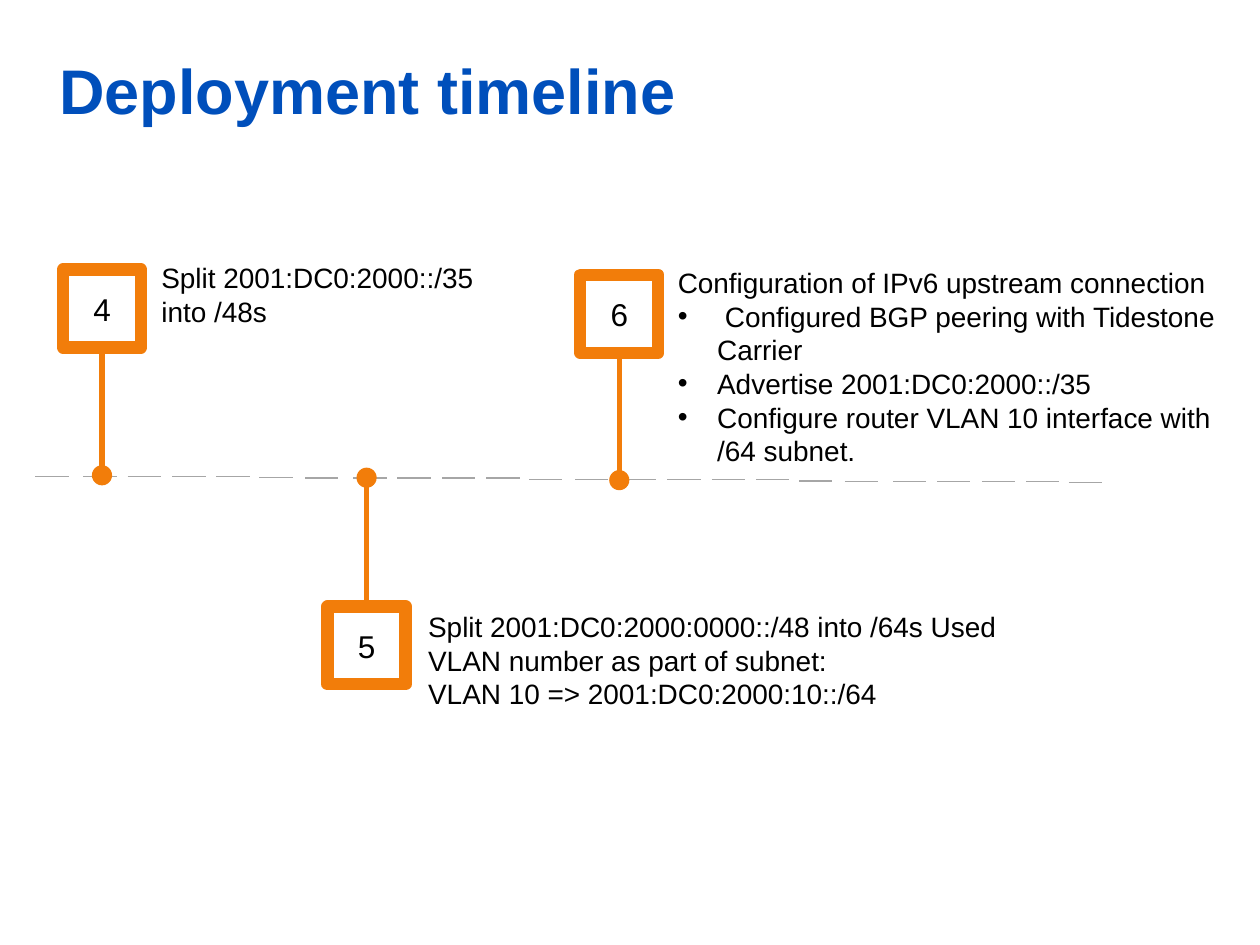
from lxml import etree
from pptx import Presentation
from pptx.dml.color import RGBColor
from pptx.enum.shapes import MSO_CONNECTOR, MSO_SHAPE
from pptx.enum.text import MSO_ANCHOR, PP_ALIGN
from pptx.oxml.ns import qn
from pptx.util import Pt

STRAIGHT = MSO_CONNECTOR.STRAIGHT
RECTANGLE, OVAL = MSO_SHAPE.RECTANGLE, MSO_SHAPE.OVAL
MIDDLE = MSO_ANCHOR.MIDDLE
LEFT, CENTER = PP_ALIGN.LEFT, PP_ALIGN.CENTER
TOP_SIDE, BOTTOM_SIDE = 0, 2

COLORS = {"title": "004FBB", "accent": "F27D0A", "dash": "A6A6A6", "text": "000000"}
FONT = "Arial"
SQUARE, DOT = 44.6, 11.5
DASH_OFFSETS = (0, 27.5, 52.75, 78.25, 103.5, 128)

MILESTONES = (
    ("4", 36, 154, 271.6),
    ("5", 187.2, 346.5, 273),
    ("6", 331.6, 157, 274.4),
)
NOTES = (
    ((64.1, 145.4, 324.7, 65.5), (42.5, -21.5), (
        ("Split 2001:DC0:2000::/35", False),
        ("into /48s", False))),
    ((237.6, 344.9, 342.7, 65.5), (0, 0), (
        ("Split 2001:DC0:2000:0000::/48 into /64s Used VLAN number as part of subnet:", False),
        ("VLAN 10 => 2001:DC0:2000:10::/64", False))),
    ((380.2, 148.3, 337, 123.8), (0, 0), (
        ("Configuration of IPv6 upstream connection", False),
        (" Configured BGP peering with Tidestone Carrier", True),
        ("Advertise 2001:DC0:2000::/35", True),
        ("Configure router VLAN 10 interface with /64 subnet.", True))),
)


def color(name):
    """Return the named colour."""
    return RGBColor.from_string(COLORS[name])


def format_para(para, size, name, align=LEFT, bold=False):
    """Format every run of a paragraph."""
    para.alignment = align
    for span in para.runs:
        span.font.name, span.font.size, span.font.bold = FONT, Pt(size), bold
        span.font.color.rgb = color(name)


def indent_para(para, margin, first, bullet=False):
    """Set the indents and the optional bullet of a paragraph."""
    props = para._p.get_or_add_pPr()
    props.set("marL", str(Pt(margin)))
    props.set("indent", str(Pt(first)))
    if bullet:
        etree.SubElement(props, qn("a:buFont")).set("typeface", FONT)
        etree.SubElement(props, qn("a:buChar")).set("char", "•")


def add_line(shapes, start, end, name, width):
    """Draw a straight line without a shadow."""
    line = shapes.add_connector(STRAIGHT, *map(Pt, start + end))
    line.line.color.rgb = color(name)
    line.line.width = Pt(width)
    etree.SubElement(line._element.spPr, qn("a:effectLst"))
    return line


def add_title(page, box, text):
    """Place the slide title in its box."""
    title = page.shapes.title
    title.left, title.top, title.width, title.height = map(Pt, box)
    frame = title.text_frame
    frame.margin_left = frame.margin_right = frame.margin_top = frame.margin_bottom = 0
    frame.vertical_anchor = MIDDLE
    frame.text = text
    format_para(frame.paragraphs[0], 36, "title", bold=True)


def add_axis(page, left, top):
    """Draw the dashed axis as four sections of six dashes, each a little lower."""
    shapes = page.shapes.add_group_shape().shapes
    for section in range(4):
        for offset in DASH_OFFSETS:
            x = left + 154.2 * section + offset
            y = top + 0.95 * section + (0.7 if offset == DASH_OFFSETS[-1] else 0)
            add_line(shapes, (x, y), (x + 19, y), "dash", 0.75)


def add_milestone(page, label, left, top, axis):
    """Draw a numbered square tied by a stem to its dot on the axis."""
    shapes = page.shapes.add_group_shape().shapes
    center = left + SQUARE / 2
    dot = shapes.add_shape(OVAL, Pt(center - DOT / 2), Pt(axis - DOT / 2), Pt(DOT), Pt(DOT))
    dot.shadow.inherit = False
    dot.fill.solid()
    dot.fill.fore_color.rgb = color("accent")
    dot.line.fill.background()

    square = shapes.add_shape(RECTANGLE, Pt(left), Pt(top), Pt(SQUARE), Pt(SQUARE))
    square.shadow.inherit = False
    square.fill.background()
    square.line.color.rgb = color("accent")
    square.line.width = Pt(7)
    square.text_frame.vertical_anchor = MIDDLE
    square.text_frame.text = label
    format_para(square.text_frame.paragraphs[0], 18, "text", CENTER)

    above = top < axis
    edge = top + SQUARE if above else top
    stem = add_line(shapes, (center, edge), (center, axis), "accent", 3)
    stem.begin_connect(square, BOTTOM_SIDE if above else TOP_SIDE)


def add_note(page, box, indent, lines):
    """Write the description of a milestone."""
    frame = page.shapes.add_textbox(*map(Pt, box)).text_frame
    frame.word_wrap = True
    frame.text = "\n".join(text for text, _ in lines)
    for para, (_, bullet) in zip(frame.paragraphs, lines):
        indent_para(para, *((22.5, -22.5) if bullet else indent), bullet)
        format_para(para, 16, "text")


def main():
    """Build the deployment timeline slide."""
    deck = Presentation()
    deck.slide_width, deck.slide_height = Pt(720), Pt(540)
    page = deck.slides.add_slide(deck.slide_layouts.get_by_name("Title Only"))
    add_title(page, (34, 5.8, 657.4, 90), "Deployment timeline")
    add_axis(page, 20.2, 272.2)
    for milestone in MILESTONES:
        add_milestone(page, *milestone)
    for note in NOTES:
        add_note(page, *note)
    deck.save("out.pptx")


if __name__ == "__main__":
    main()
